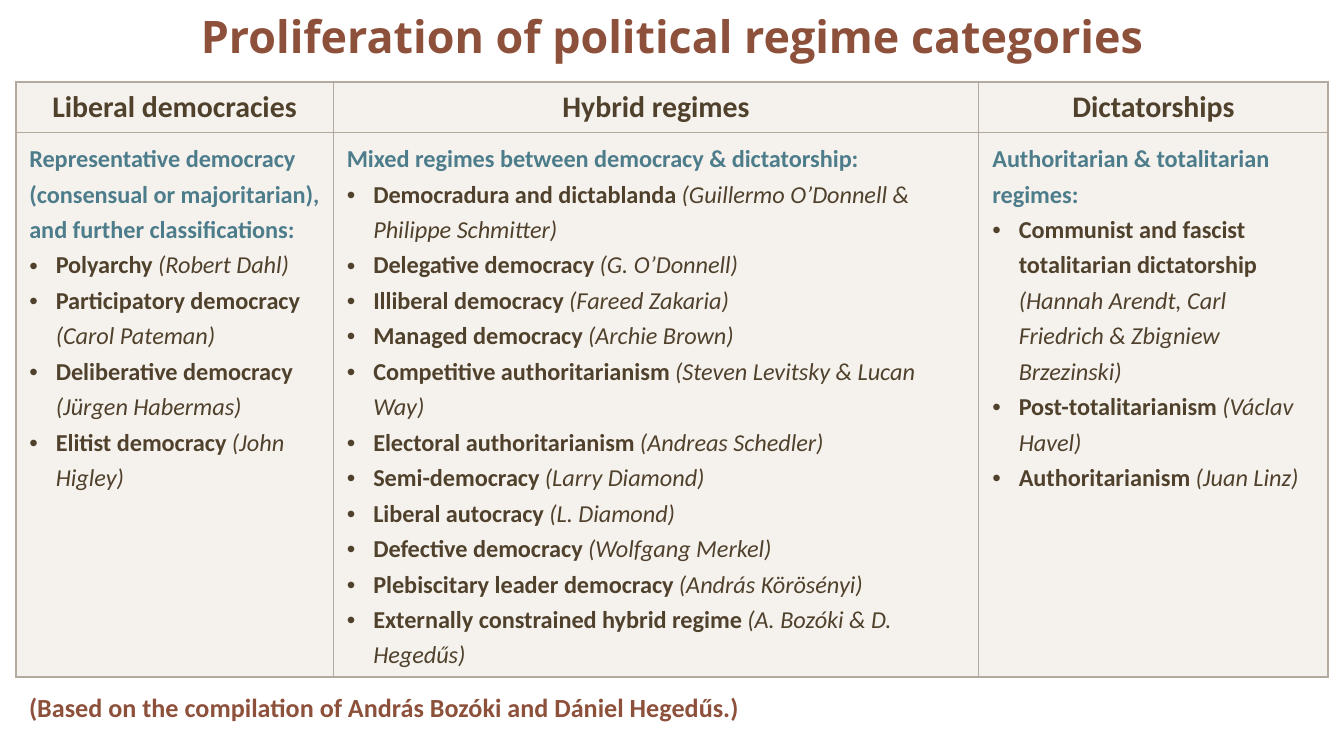
from dataclasses import dataclass

from lxml import etree
from pptx import Presentation
from pptx import util as u
from pptx.dml import color
from pptx.enum import text
from pptx.oxml import ns


@dataclass
class Theme:
    head: str = "Open Sans"
    body: str = "Calibri"
    rust: str = "8D503B"
    brown: str = "50412C"
    teal: str = "4D7C8B"
    sand: str = "EFEAE4"
    line: str = "B3AA9D"
    title: float = 24
    column: float = 16
    note: float = 14
    item: float = 13
    thick: float = 1
    thin: float = 0.5
    alpha: int = 60
    indent: float = 0.5
    spacing: float = 1.2


TITLE = "Proliferation of political regime categories"
NOTE = "(Based on the compilation of András Bozóki and Dániel Hegedűs.)"
WIDTHS = [6, 12.2, 6.6]
HEIGHTS = [0.94, 10.26]

# Each column: heading, introduction, (regime, authors) pairs
REGIMES = [
    ("Liberal democracies",
     "Representative democracy (consensual or majoritarian), and further classifications:",
     [("Polyarchy", "Robert Dahl"),
      ("Participatory democracy", "Carol Pateman"),
      ("Deliberative democracy", "Jürgen Habermas"),
      ("Elitist democracy", "John Higley")]),
    ("Hybrid regimes",
     "Mixed regimes between democracy & dictatorship:",
     [("Democradura and dictablanda", "Guillermo O’Donnell & Philippe Schmitter"),
      ("Delegative democracy", "G. O’Donnell"),
      ("Illiberal democracy", "Fareed Zakaria"),
      ("Managed democracy", "Archie Brown"),
      ("Competitive authoritarianism", "Steven Levitsky & Lucan Way"),
      ("Electoral authoritarianism", "Andreas Schedler"),
      ("Semi-democracy", "Larry Diamond"),
      ("Liberal autocracy", "L. Diamond"),
      ("Defective democracy", "Wolfgang Merkel"),
      ("Plebiscitary leader democracy", "András Körösényi"),
      ("Externally constrained hybrid regime", "A. Bozóki & D. Hegedűs")]),
    ("Dictatorships",
     "Authoritarian & totalitarian regimes:",
     [("Communist and fascist totalitarian dictatorship",
       "Hannah Arendt, Carl Friedrich & Zbigniew Brzezinski"),
      ("Post-totalitarianism", "Václav Havel"),
      ("Authoritarianism", "Juan Linz")]),
]


def write(par, words, font, size, ink, bold=True, italic=False):
    run = par.add_run()
    run.text = words
    run.font.name, run.font.size = font, u.Pt(size)
    run.font.bold, run.font.italic = bold, italic
    run.font.color.rgb = color.RGBColor.from_string(ink)


class Deck:
    def __init__(self, theme):
        self.theme = theme
        self.file = Presentation()
        self.file.slide_width, self.file.slide_height = u.Cm(25.4), u.Cm(14.29)
        self.slide = self.file.slides.add_slide(self.file.slide_layouts[5])

    def title(self, words, *box):
        th, shape = self.theme, self.slide.shapes.title
        shape.left, shape.top, shape.width, shape.height = map(u.Cm, box)
        frame = shape.text_frame
        frame.vertical_anchor = text.MSO_ANCHOR.MIDDLE
        par = frame.paragraphs[0]
        par.alignment = text.PP_ALIGN.CENTER
        write(par, words, th.head, th.title, th.rust)

    def note(self, words, *box):
        th = self.theme
        frame = self.slide.shapes.add_textbox(*map(u.Cm, box)).text_frame
        frame.word_wrap = False
        frame.auto_size = text.MSO_AUTO_SIZE.SHAPE_TO_FIT_TEXT
        write(frame.paragraphs[0], words, th.body, th.note, th.rust)

    def table(self, data, left, top, widths, heights):
        box = map(u.Cm, (left, top, sum(widths), sum(heights)))
        grid = self.slide.shapes.add_table(len(heights), len(widths), *box).table
        grid.first_row = grid.horz_banding = False
        for row, size in zip(grid.rows, heights):
            row.height = u.Cm(size)
        for col, size in enumerate(widths):
            grid.columns[col].width = u.Cm(size)
            name, intro, items = data[col]
            self.header(grid.cell(0, col), name)
            self.items(grid.cell(1, col), intro, items)
            for row in range(len(heights)):
                edges = {"L": col == 0, "R": col == len(widths) - 1,
                         "T": row == 0, "B": row == len(heights) - 1}
                self.paint(grid.cell(row, col), edges)

    def header(self, cell, words):
        th, par = self.theme, cell.text_frame.paragraphs[0]
        par.alignment = text.PP_ALIGN.CENTER
        write(par, words, th.body, th.column, th.brown)

    def items(self, cell, intro, items):
        th, frame = self.theme, cell.text_frame
        par = frame.paragraphs[0]
        par.line_spacing = th.spacing
        write(par, intro, th.body, th.item, th.teal)
        for regime, authors in items:
            par = frame.add_paragraph()
            self.bullet(par)
            par.line_spacing = th.spacing
            write(par, f"{regime} ", th.body, th.item, th.brown)
            write(par, f"({authors})", th.body, th.item, th.brown,
                  bold=False, italic=True)

    def bullet(self, par):
        props, gap = par._p.get_or_add_pPr(), u.Cm(self.theme.indent)
        props.set("marL", str(gap))
        props.set("indent", str(-gap))
        etree.SubElement(props, ns.qn("a:buFont"), typeface="Arial")
        etree.SubElement(props, ns.qn("a:buChar"), char="•")

    def paint(self, cell, edges):
        """Fill a cell and draw its borders, thick where edges is true."""
        th = self.theme
        cell.fill.solid()
        cell.fill.fore_color.rgb = color.RGBColor.from_string(th.sand)
        props = cell._tc.get_or_add_tcPr()
        tint = props.find(f".//{ns.qn('a:srgbClr')}")
        etree.SubElement(tint, ns.qn("a:alpha"), val=str(th.alpha * 1000))
        for spot, (side, outer) in enumerate(edges.items()):
            width = u.Pt(th.thick if outer else th.thin)
            line = etree.Element(ns.qn(f"a:ln{side}"), w=str(width))
            fill = etree.SubElement(line, ns.qn("a:solidFill"))
            etree.SubElement(fill, ns.qn("a:srgbClr"), val=th.line)
            props.insert(spot, line)


def main():
    deck = Deck(Theme())
    deck.title(TITLE, 0.3, 0, 24.8, 1.35)
    deck.table(REGIMES, 0.3, 1.55, WIDTHS, HEIGHTS)
    deck.note(NOTE, 0.3, 12.95, 14.02, 0.86)
    deck.file.save("out.pptx")


if __name__ == "__main__":
    main()
